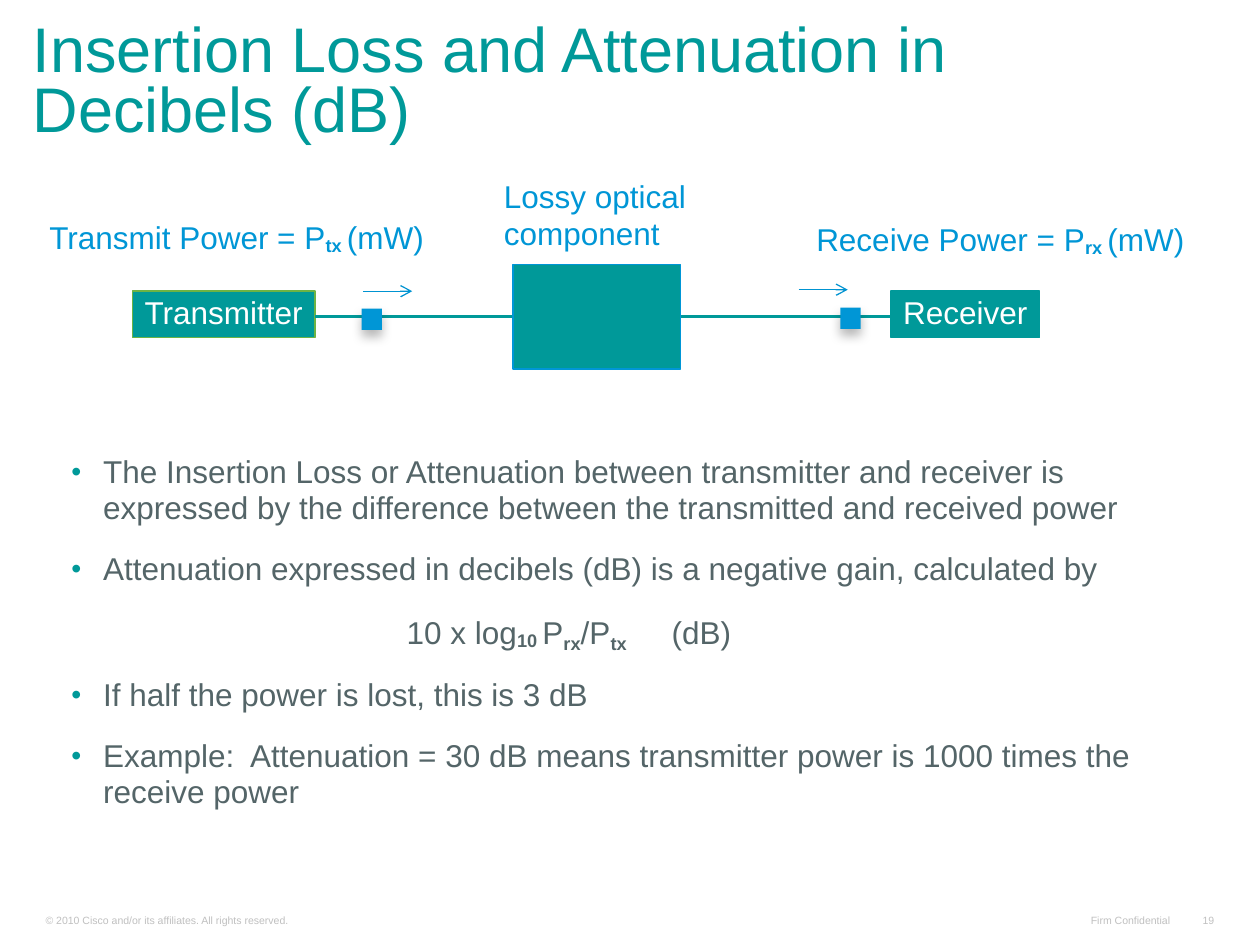
from dataclasses import dataclass

from lxml.etree import SubElement
from pptx import Presentation
from pptx.dml.color import RGBColor
from pptx.enum.shapes import MSO_CONNECTOR, MSO_SHAPE
from pptx.enum.text import MSO_ANCHOR, PP_ALIGN
from pptx.oxml.ns import qn
from pptx.util import Cm, Pt


@dataclass(frozen=True)
class Theme:
    font: str = "Arial"
    teal: str = "009999"
    blue: str = "0096D6"
    arrow: str = "0093D1"
    green: str = "6DB344"
    body: str = "546568"
    pale: str = "C0C0C0"
    white: str = "FFFFFF"
    head: int = 36
    text: int = 18
    foot: int = 6


THEME = Theme()
TIGHT = (0.23, 0.1)
WIDE = (0.25, 0.13)

POINTS = [
    "The Insertion Loss or Attenuation between transmitter and receiver is "
    "expressed by the difference between the transmitted and received power",
    "Attenuation expressed in decibels (dB) is a negative gain, calculated by",
    [("\t10 x log", 0), ("10 ", -10), ("P", 0), ("rx", -20),
     ("/P", 0), ("tx", -20), ("\t(dB)", 0)],
    "If half the power is lost, this is 3 dB",
    "Example:  Attenuation = 30 dB means transmitter power is 1000 times the "
    "receive power",
]


def add_xml(parent, tag, **attrs):
    return SubElement(parent, qn(tag), {k: str(v) for k, v in attrs.items()})


def set_font(para, size, color):
    font = para.font
    font.name, font.size = THEME.font, Pt(size)
    font.color.rgb = RGBColor.from_string(color)


def add_runs(para, text):
    """Fill a paragraph from a string or from (text, baseline) pairs."""
    for part, base in [(text, 0)] if isinstance(text, str) else text:
        run = para.add_run()
        run.text = part
        if base:
            run.font.bold = True
            run.font._element.set("baseline", str(base * 1000))


def set_frame(frame, inset, anchor, wrap):
    frame.margin_left = frame.margin_right = Cm(inset[0])
    frame.margin_top = frame.margin_bottom = Cm(inset[1])
    frame.vertical_anchor, frame.word_wrap = anchor, wrap


def add_text(slide, box, text, size, color, align=PP_ALIGN.LEFT, gap=1.0,
             inset=TIGHT, anchor=MSO_ANCHOR.TOP, wrap=True):
    frame = slide.shapes.add_textbox(*map(Cm, box)).text_frame
    set_frame(frame, inset, anchor, wrap)
    para = frame.paragraphs[0]
    para.alignment, para.line_spacing = align, gap
    add_runs(para, text)
    set_font(para, size, color)


def add_block(slide, box, fill, line=None, text=None):
    block = slide.shapes.add_shape(MSO_SHAPE.RECTANGLE, *map(Cm, box))
    block.shadow.inherit = False
    block.fill.solid()
    block.fill.fore_color.rgb = RGBColor.from_string(fill)
    if line:
        block.line.color.rgb = RGBColor.from_string(line)
        block.line.width = Pt(0.75)
    else:
        block.line.fill.background()
    if text:
        set_frame(block.text_frame, TIGHT, MSO_ANCHOR.MIDDLE, False)
        para = block.text_frame.paragraphs[0]
        para.alignment, para.line_spacing = PP_ALIGN.CENTER, 0.9
        add_runs(para, text)
        set_font(para, THEME.text, THEME.white)
    return block


def add_pulse(slide, left, top):
    """Draw a light pulse: a small square with a soft shadow below it."""
    pulse = add_block(slide, (left, top, 0.41, 0.43), THEME.blue)
    effects = pulse._element.spPr.find(qn("a:effectLst"))
    shade = add_xml(effects, "a:outerShdw", blurRad=Pt(6), dist=Pt(4),
                    dir=90 * 60000, algn="ctr", rotWithShape=0)
    black = add_xml(shade, "a:srgbClr", val="000000")
    add_xml(black, "a:alpha", val=27000)


def add_arrow(slide, left, right, y, color, width, tip):
    arrow = slide.shapes.add_connector(
        MSO_CONNECTOR.STRAIGHT, Cm(left), Cm(y), Cm(right), Cm(y))
    arrow.line.color.rgb = RGBColor.from_string(color)
    arrow.line.width = Pt(width)
    add_xml(arrow.line._get_or_add_ln(), "a:tailEnd", type=tip)
    add_xml(arrow._element.spPr, "a:effectLst")


def add_points(slide):
    frame = slide.shapes.add_textbox(
        Cm(1.19), Cm(9.04), Cm(22.05), Cm(7.8)).text_frame
    set_frame(frame, WIDE, MSO_ANCHOR.TOP, True)
    for i, text in enumerate(POINTS):
        para = frame.add_paragraph() if i else frame.paragraphs[0]
        para.line_spacing = 0.95
        if i:
            para.space_before = Pt(14.4)
        props = para._p.get_or_add_pPr()
        if isinstance(text, str):
            props.set("marL", str(Cm(0.64)))
            props.set("indent", str(-Cm(0.64)))
            tint = add_xml(props, "a:buClr")
            add_xml(tint, "a:srgbClr", val=THEME.teal)
            add_xml(props, "a:buSzPct", val=90000)
            add_xml(props, "a:buFont", typeface=THEME.font)
            add_xml(props, "a:buChar", char="•")
        else:
            add_xml(props, "a:buNone")
            tabs = add_xml(props, "a:tabLst")
            for stop in (6.76, 12.1):
                add_xml(tabs, "a:tab", pos=Cm(stop), algn="l")
        add_runs(para, text)
        set_font(para, THEME.text, THEME.body)


def add_footer(slide):
    for left, width, text, align in (
            (0.69, 9.5, "© 2010 Cisco and/or its affiliates. "
             "All rights reserved.", PP_ALIGN.LEFT),
            (21.56, 2.26, "Firm Confidential", PP_ALIGN.RIGHT),
            (24, 0.71, "19", PP_ALIGN.RIGHT)):
        add_text(slide, (left, 18.29, width, 0.48), text, THEME.foot,
                 THEME.pale, align, anchor=MSO_ANCHOR.BOTTOM,
                 wrap=align == PP_ALIGN.LEFT)


def add_link(slide):
    """Draw the optical link from transmitter to receiver."""
    t = THEME
    add_block(slide, (2.67, 5.87, 3.68, 0.94), t.teal, t.green, "Transmitter")
    add_block(slide, (17.96, 5.87, 3, 0.94), t.teal, t.teal, "Receiver")
    for box, name, sub in (
            ((0.64, 4.37, 8.26, 0.91), "Transmit", "tx "),
            ((15.77, 4.42, 8.79, 0.91), "Receive", "rx ")):
        parts = [(f"{name} Power = P", 0), (sub, -10), ("(mW)", 0)]
        add_text(slide, box, parts, t.text, t.blue, PP_ALIGN.CENTER, 0.9)
    add_arrow(slide, 6.35, 18.21, 6.38, t.teal, 1.5, "triangle")
    add_block(slide, (10.34, 5.33, 3.38, 2.11), t.teal, t.blue)
    add_text(slide, (9.91, 3.43, 4.27, 1.78), "Lossy optical component",
             t.text, t.blue, inset=WIDE)
    for left, top in ((7.29, 6.22), (16.94, 6.2)):
        add_pulse(slide, left, top)
    for left, y in ((7.32, 5.87), (16.1, 5.84)):
        add_arrow(slide, left, left + 0.99, y, t.arrow, 0.75, "arrow")


def main():
    deck = Presentation()
    deck.slide_width, deck.slide_height = Cm(25.4), Cm(19.05)
    slide = deck.slides.add_slide(deck.slide_layouts[6])
    add_footer(slide)
    add_text(slide, (0.43, 0.18, 22.63, 2.87),
             "Insertion Loss and Attenuation in Decibels (dB)",
             THEME.head, THEME.teal, gap=0.8, inset=(0.23, 0.13),
             anchor=MSO_ANCHOR.BOTTOM)
    add_points(slide)
    add_link(slide)
    deck.save("out.pptx")


if __name__ == "__main__":
    main()
